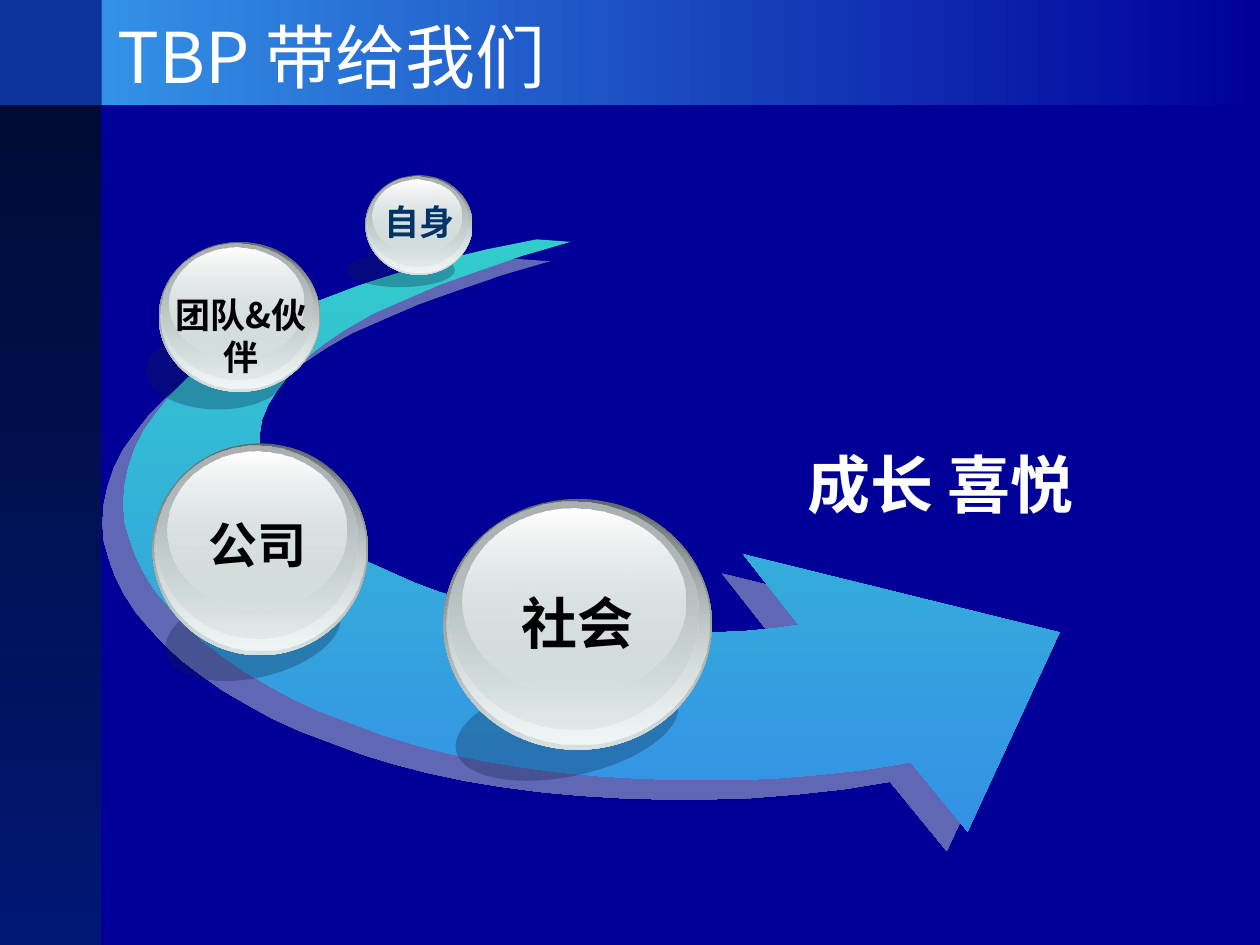
from lxml.etree import SubElement
from pptx import Presentation
from pptx.dml.color import RGBColor
from pptx.enum.shapes import MSO_SHAPE
from pptx.enum.text import MSO_ANCHOR, MSO_AUTO_SIZE, PP_ALIGN
from pptx.oxml.ns import qn
from pptx.util import Pt

FONT = "Noto Sans CJK SC"
WHITE = RGBColor(0xFF, 0xFF, 0xFF)
BLACK = RGBColor(0, 0, 0)
NAVY = RGBColor(0x00, 0x33, 0x66)
BLUE = RGBColor(0x00, 0x00, 0x99)
SKY = RGBColor(0x34, 0x91, 0xE6)
TEAL = RGBColor(0x33, 0xCC, 0xCC)
CORNER = RGBColor(0x0D, 0x34, 0x9B)
SIDE_TOP = RGBColor(0x00, 0x0B, 0x35)
SIDE_END = RGBColor(0x00, 0x17, 0x73)
SHADE = RGBColor(0x0F, 0x21, 0x45)
STEEL = RGBColor(0x63, 0x68, 0x69)
GREY = RGBColor(0xAA, 0xB2, 0xB3)
PALE = RGBColor(0xD6, 0xE1, 0xE2)
MIST = RGBColor(0xF1, 0xF5, 0xF5)

ARROW_UNIT = Pt(0.72)
ARROW_POINTS = [
    (426, 190), (386, 198), (349, 207), (315, 217), (284, 227), (255, 238),
    (228, 250), (205, 262), (184, 274), (165, 287), (149, 300), (135, 314),
    (124, 328), (114, 342), (107, 356), (102, 371), (99, 385), (98, 400),
    (99, 414), (103, 428), (108, 442), (115, 456), (124, 470), (135, 483),
    (147, 496), (161, 509), (177, 521), (194, 533), (213, 544), (233, 555),
    (255, 565), (279, 574), (303, 583), (329, 591), (356, 598), (384, 604),
    (414, 609), (444, 613), (476, 616), (509, 618), (542, 619), (577, 619),
    (612, 618), (649, 615), (686, 611), (723, 605), (768, 660), (841, 502),
    (590, 440), (634, 496), (613, 499), (591, 501), (569, 502), (547, 503),
    (524, 502), (501, 501), (478, 498), (455, 496), (433, 492), (411, 487),
    (390, 482), (369, 476), (349, 470), (330, 463), (312, 455), (294, 447),
    (279, 439), (264, 430), (251, 420), (238, 410), (228, 400), (220, 390),
    (214, 379), (209, 368), (206, 356), (206, 345), (208, 333), (213, 321),
    (220, 310), (229, 298), (242, 285), (257, 273), (275, 261), (296, 249),
    (321, 238), (349, 226), (380, 215), (415, 203), (453, 192),
]

BALL_LAYERS = [
    ((0, 0, 1, 1), (STEEL, PALE), (100, 100)),
    ((0.01, 0.01, 0.98, 0.97), (PALE, MIST), (0, 100)),
    ((0.02, 0.01, 0.93, 0.91), (GREY, PALE), (100, 48)),
    ((0.07, 0.04, 0.83, 0.74), (WHITE, PALE), (100, 38)),
]

BALLS = [
    dict(text="社会", frame=(253.4, 285.1, 153.4, 143.3),
         shade=(259.2, 387.4, 129.6, 56.2), tilt=-12.1,
         label=(290.9, 332.6, 78.5, 45.4), size=32),
    dict(text="公司", frame=(87.1, 253.4, 123.1, 121),
         shade=(93.6, 336.2, 102.2, 51.1), tilt=-12.9,
         label=(111.6, 290.2, 70.6, 41), size=28),
    dict(text="团队&伙伴", frame=(90.7, 138.2, 92.2, 85.7),
         shade=(83.5, 189.4, 82.1, 44.6),
         label=(84.2, 164.2, 107.3, 31), size=20, wrap=True),
    dict(text="自身", frame=(208.8, 100.1, 61.2, 56.9),
         shade=(198, 144.7, 61.9, 19.4),
         label=(212.4, 110.9, 54.7, 31), size=20, color=NAVY),
]


def paint(shape, colors, alphas=(100, 100), angle=270):
    """Fill a shape with one colour or a two-stop gradient, without line or shadow."""
    shape.shadow.inherit = False
    shape.line.fill.background()
    if len(colors) == 1:
        shape.fill.solid()
        shape.fill.fore_color.rgb = colors[0]
    else:
        shape.fill.gradient()
        shape.fill.gradient_angle = angle
        for stop, color, position in zip(shape.fill.gradient_stops, colors, (0, 1)):
            stop.color.rgb = color
            stop.position = position
    for node, alpha in zip(list(shape.element.spPr.iter(qn("a:srgbClr"))), alphas):
        if alpha < 100:
            SubElement(node, qn("a:alpha"), val=str(alpha * 1000))


def add_figure(page, kind, frame, colors, rotation=0, **style):
    """Add a painted preset shape."""
    shape = page.shapes.add_shape(kind, *map(Pt, frame))
    shape.rotation = rotation
    paint(shape, colors, **style)


def write_text(box, text, size, color=WHITE, bold=False, align=PP_ALIGN.LEFT,
               anchor=MSO_ANCHOR.TOP, wrap=True, fit=MSO_AUTO_SIZE.SHAPE_TO_FIT_TEXT):
    """Write one formatted line of text into a box."""
    frame = box.text_frame
    frame.word_wrap = wrap
    frame.auto_size = fit
    frame.vertical_anchor = anchor
    para = frame.paragraphs[0]
    para.alignment = align
    span = para.add_run()
    span.text = text
    span.font.name = FONT
    span.font.size = Pt(size)
    span.font.bold = bold
    span.font.color.rgb = color
    SubElement(span.font._element, qn("a:ea"), typeface=FONT)


def add_text(page, frame, text, **style):
    """Add a text box."""
    write_text(page.shapes.add_textbox(*map(Pt, frame)), text, **style)


def add_title(page, frame, text):
    """Place the title placeholder in front of the banner and fill it."""
    title = page.shapes.title
    title.left, title.top, title.width, title.height = map(Pt, frame)
    write_text(title, text, size=40, anchor=MSO_ANCHOR.MIDDLE, fit=MSO_AUTO_SIZE.NONE)
    title.element.getparent().append(title.element)


def add_arrow(page):
    """Add the sweeping arrow with its offset shadow."""
    builder = page.shapes.build_freeform(*ARROW_POINTS[0], scale=ARROW_UNIT)
    builder.add_line_segments(ARROW_POINTS[1:], close=True)
    arrow = builder.convert_to_shape()
    paint(arrow, (TEAL, SKY))
    effects = arrow.element.spPr.find(qn("a:effectLst"))
    shadow = SubElement(effects, qn("a:outerShdw"), blurRad="0", dist=str(Pt(16.3)),
                        dir=str(137 * 60000), algn="ctr", rotWithShape="0")
    color = SubElement(shadow, qn("a:srgbClr"), val="C1D1D3")
    SubElement(color, qn("a:alpha"), val="50000")


def add_ball(page, text, frame, shade, label, size, tilt=0, color=BLACK, wrap=False):
    """Add a glossy ball with its ground shade and label."""
    add_figure(page, MSO_SHAPE.OVAL, shade, (SHADE,), rotation=tilt, alphas=(30,))
    left, top, width, height = frame
    for (x, y, across, down), colors, alphas in BALL_LAYERS:
        layer = (left + x * width, top + y * height, across * width, down * height)
        add_figure(page, MSO_SHAPE.OVAL, layer, colors, alphas=alphas)
    add_text(page, label, text, size=size, color=color, bold=True,
             align=PP_ALIGN.CENTER, wrap=wrap)


def main():
    """Build the slide and save the deck."""
    deck = Presentation()
    deck.slide_width, deck.slide_height = Pt(720), Pt(540)
    page = deck.slides.add_slide(deck.slide_layouts[5])
    page.background.fill.solid()
    page.background.fill.fore_color.rgb = BLUE
    add_figure(page, MSO_SHAPE.RECTANGLE, (58, 0, 662, 60), (SKY, BLUE), angle=0)
    add_figure(page, MSO_SHAPE.RECTANGLE, (0, 60, 58, 480), (SIDE_TOP, SIDE_END))
    add_figure(page, MSO_SHAPE.RECTANGLE, (0, 0, 58, 60), (CORNER,))
    add_title(page, (60, 9.4, 588, 44.6), "TBP 带给我们")
    add_arrow(page)
    add_text(page, (454.3, 251.3, 239.8, 50.4), "成长 喜悦", size=36, bold=True)
    for ball in BALLS:
        add_ball(page, **ball)
    deck.save("out.pptx")


if __name__ == "__main__":
    main()
